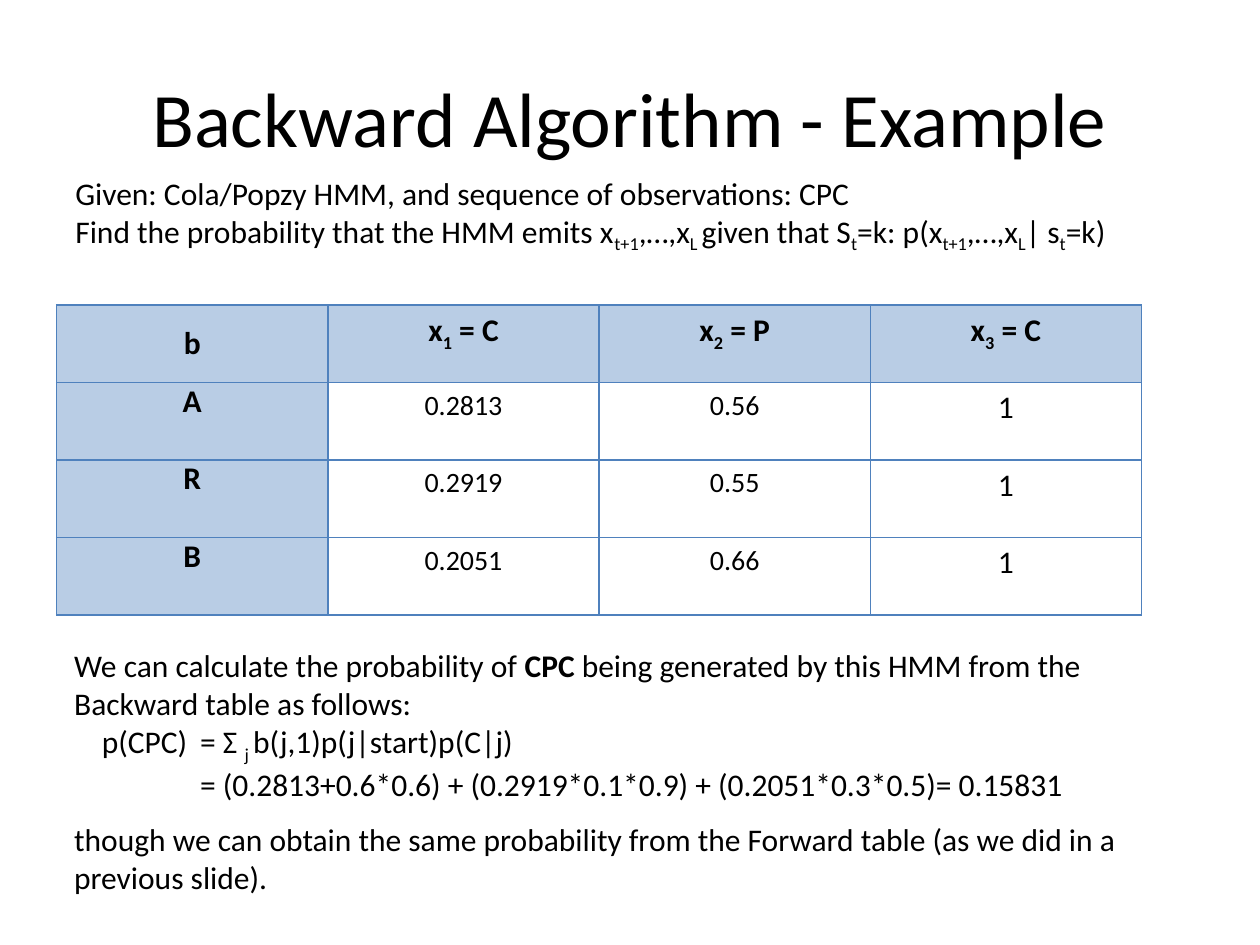
"""Build the Backward Algorithm example slide."""
from dataclasses import dataclass

from lxml import etree
from pptx import Presentation
from pptx.dml.color import RGBColor
from pptx.enum import text as tx
from pptx.oxml import ns
from pptx.util import Inches, Pt


@dataclass(frozen=True)
class Theme:
    font: str = "Calibri"
    ink: str = "000000"
    head: str = "B9CDE5"
    body: str = "FFFFFF"
    edge: str = "4F81BD"
    title: int = 44
    text: int = 18
    small: int = 16


@dataclass(frozen=True)
class Line:
    text: str
    left: float = 0
    first: float = 0
    gap: int = 0


@dataclass(frozen=True)
class Box:
    left: float
    top: float
    width: float
    height: float
    lines: tuple[Line, ...]


LOOK = Theme()
MID = tx.PP_ALIGN.CENTER
BOXES = (
    Box(0.5, 1.33, 8.56, 1.01, (
        Line("Given: Cola/Popzy HMM, and sequence of observations: CPC"),
        Line("Find the probability that the HMM emits x~t+1~,…,x~L ~given that "
             "S~t~=k: p(x~t+1~,…,x~L~| s~t~=k)"),
    )),
    Box(0.49, 5.08, 8.49, 2.05, (
        Line("We can calculate the probability of ^CPC^ being generated by this HMM "
             "from the Backward table as follows:"),
        Line("p(CPC) \t= Σ ~j ~b(j,1)p(j|start)p(C|j)", left=1, first=-0.78),
        Line("= (0.2813+0.6*0.6) + (0.2919*0.1*0.9) + (0.2051*0.3*0.5)= 0.15831", left=1),
        Line("though we can obtain the same probability from the Forward table "
             "(as we did in a previous slide).", gap=10),
    )),
)
ROWS = (
    ("b", "x~1~ = C", "x~2~ = P", "x~3~ = C"),
    ("A", "0.2813", "0.56", "1"),
    ("R", "0.2919", "0.55", "1"),
    ("B", "0.2051", "0.66", "1"),
)


def put(para, text: str, *, size: int = LOOK.text, bold: bool = False, align=None) -> None:
    """Write text in which ~ toggles subscript and ^ toggles bold."""
    para.alignment = align
    for i, part in enumerate(text.split("~")):
        for j, bit in enumerate(part.split("^")):
            if not bit:
                continue
            run = para.add_run()
            run.text = bit
            font = run.font
            font.name, font.size = LOOK.font, Pt(size)
            font.bold = bold or j % 2 == 1
            font.color.rgb = RGBColor.from_string(LOOK.ink)
            if i % 2:
                font._element.set("baseline", "-25000")


def write(slide, box: Box) -> None:
    """Add a text box with its lines."""
    area = (Inches(n) for n in (box.left, box.top, box.width, box.height))
    frame = slide.shapes.add_textbox(*area).text_frame
    frame.word_wrap = True
    for i, line in enumerate(box.lines):
        para = frame.add_paragraph() if i else frame.paragraphs[0]
        if line.left:
            props = para._p.get_or_add_pPr()
            props.set("marL", str(Inches(line.left)))
            props.set("indent", str(Inches(line.first)))
        if line.gap:
            para.space_before = Pt(line.gap)
        put(para, line.text)


def edge(cell) -> None:
    """Outline a cell on all four sides."""
    props = cell._tc.get_or_add_tcPr()
    for side in ("lnL", "lnR", "lnT", "lnB"):
        rule = etree.SubElement(props, ns.qn(f"a:{side}"), w=str(Pt(1)))
        fill = etree.SubElement(rule, ns.qn("a:solidFill"))
        etree.SubElement(fill, ns.qn("a:srgbClr"), val=LOOK.edge)


def grid(slide) -> None:
    """Add the table of backward values."""
    rows, cols = len(ROWS), len(ROWS[0])
    table = slide.shapes.add_table(
        rows, cols, Inches(0.45), Inches(2.42), Inches(8.61), Inches(2.46)).table
    for r, row in enumerate(ROWS):
        for c, value in enumerate(row):
            cell = table.cell(r, c)
            head = r == 0 or c == 0
            if c == 0:
                cell.margin_left = cell.margin_right = 0
                cell.margin_top = cell.margin_bottom = 0
            if r == c == 0:
                cell.vertical_anchor = tx.MSO_ANCHOR.MIDDLE
            edge(cell)
            cell.fill.solid()
            cell.fill.fore_color.rgb = RGBColor.from_string(LOOK.head if head else LOOK.body)
            size = LOOK.text if head or c == cols - 1 else LOOK.small
            put(cell.text_frame.paragraphs[0], value, size=size, bold=head, align=MID)


def main() -> None:
    """Build and save the slide."""
    deck = Presentation()
    deck.slide_width, deck.slide_height = Inches(10), Inches(7.5)
    slide = deck.slides.add_slide(deck.slide_layouts[5])
    title = slide.shapes.title
    title.left, title.top = Inches(0.5), Inches(0.3)
    title.width, title.height = Inches(9), Inches(1.25)
    title.text_frame.vertical_anchor = tx.MSO_ANCHOR.MIDDLE
    put(title.text_frame.paragraphs[0], "Backward Algorithm - Example",
        size=LOOK.title, align=MID)
    grid(slide)
    for box in BOXES:
        write(slide, box)
    deck.save("out.pptx")


if __name__ == "__main__":
    main()
